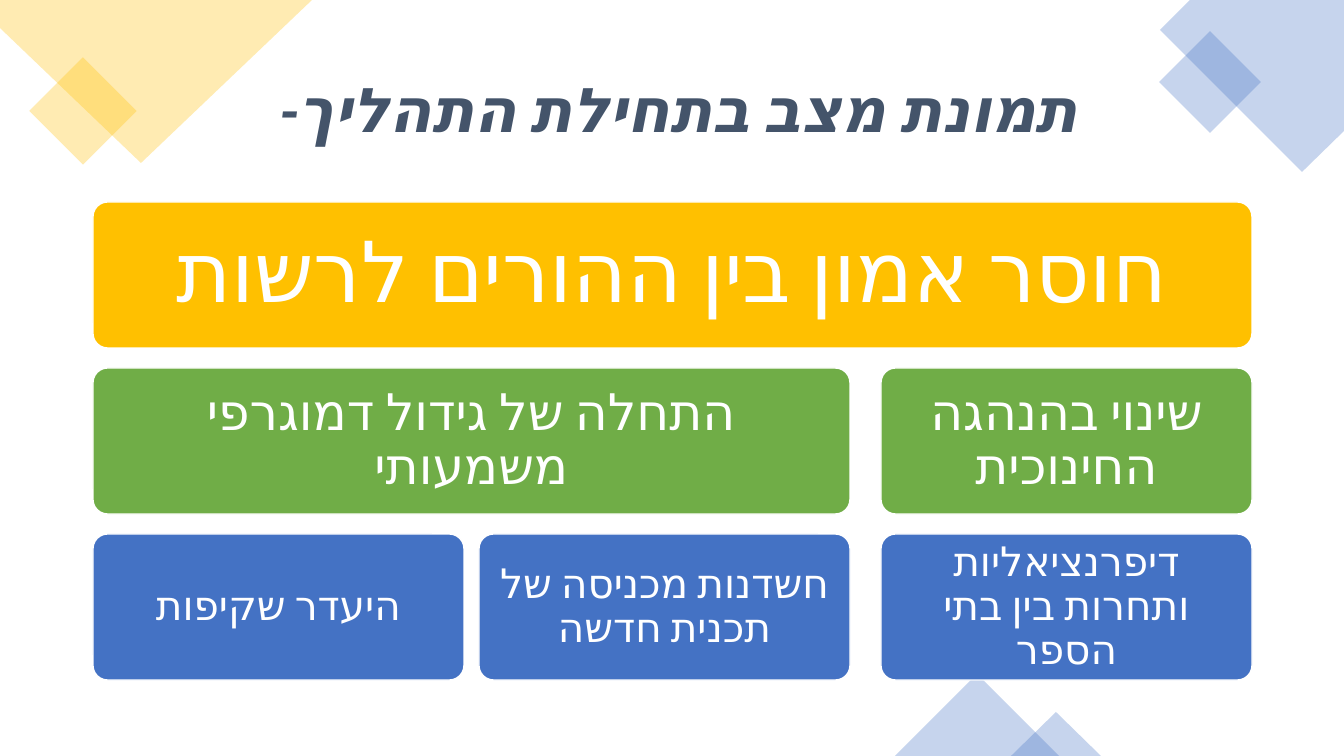
from lxml.etree import SubElement
from pptx import Presentation
from pptx.dml.color import RGBColor
from pptx.enum.shapes import MSO_SHAPE
from pptx.enum.text import MSO_ANCHOR, PP_ALIGN
from pptx.oxml.ns import qn
from pptx.util import Pt

# Content
TITLE = "תמונת מצב בתחילת התהליך- "
YELLOW, GREEN, BLUE, SLATE, WHITE = "FFC000", "70AD47", "4472C4", "44546A", "FFFFFF"

# One entry per row: fill, text size, inset px, boxes (first column, last column, text)
ROWS = [
    (YELLOW, 60, 29, [(0, 2, "חוסר אמון בין ההורים לרשות")]),
    (GREEN, 36, 19, [(0, 1, "התחלה של גידול דמוגרפי משמעותי"),
                     (2, 2, "שינוי בהנהגה החינוכית")]),
    (BLUE, 29, 16, [(0, 0, "היעדר שקיפות"),
                    (1, 1, "חשדנות מכניסה של תכנית חדשה"),
                    (2, 2, "דיפרנציאליות ותחרות בין בתי הספר")]),
]

# Corner decorations in px
CORNERS = [
    (YELLOW, [(0, 0), (312, 0), (141, 163), (0, 28)]),
    (BLUE, [(1190, 0), (1344, 0), (1344, 131), (1302, 172), (1160, 30)]),
]
ACCENTS = [
    (MSO_SHAPE.RECTANGLE, YELLOW, 45, (45, 73, 76, 76)),
    (MSO_SHAPE.RECTANGLE, BLUE, 45, (1174, 46, 72, 72)),
    (MSO_SHAPE.ISOSCELES_TRIANGLE, BLUE, 0, (895, 674, 164, 82)),
    (MSO_SHAPE.ISOSCELES_TRIANGLE, BLUE, 0, (1011, 712, 90, 44)),
]

# Geometry in px
SLIDE_W, SLIDE_H = 1344, 756
TITLE_BOX = (93, 40, 1159, 146)
COL_LEFTS, COL_W = (93, 479, 881), 371
ROW_TOP, ROW_H, ROW_PITCH = 202, 146, 166
EMU_PER_PX = 914400 / 100.8


def px(n):
    return round(n * EMU_PER_PX)


def rgb(value):
    return RGBColor.from_string(value)


def paint(sp, color, opacity=100):
    sp.shadow.inherit = False
    sp.fill.solid()
    sp.fill.fore_color.rgb = rgb(color)
    if opacity < 100:
        sp.line.fill.background()
        clr = sp.fill._xPr.find(qn("a:solidFill"))[0]
        SubElement(clr, qn("a:alpha")).set("val", str(opacity * 1000))


def write(tf, text, color, **font):
    tf.word_wrap = True
    tf.vertical_anchor = MSO_ANCHOR.MIDDLE
    p = tf.paragraphs[0]
    p.alignment = PP_ALIGN.CENTER
    p.line_spacing = 0.9
    p._p.get_or_add_pPr().set("rtl", "1")
    r = p.add_run()
    r.text = text
    for name, value in {"name": "Calibri", **font}.items():
        setattr(r.font, name, value)
    r.font.color.rgb = rgb(color)
    # Hebrew uses the complex-script font
    rPr = r._r.get_or_add_rPr()
    rPr.set("lang", "he-IL")
    SubElement(rPr, qn("a:cs")).set("typeface", "Calibri")


prs = Presentation()
prs.slide_width, prs.slide_height = px(SLIDE_W), px(SLIDE_H)
slide = prs.slides.add_slide(prs.slide_layouts[5])
shapes = slide.shapes

# Corner decorations
for color, points in CORNERS:
    builder = shapes.build_freeform(*points[0], scale=EMU_PER_PX)
    builder.add_line_segments(points[1:], close=True)
    paint(builder.convert_to_shape(), color, 30)
for kind, color, angle, box in ACCENTS:
    sp = shapes.add_shape(kind, *map(px, box))
    sp.rotation = angle
    paint(sp, color, 30)

# Title, in front of the decorations
title = shapes.title
title.left, title.top, title.width, title.height = map(px, TITLE_BOX)
write(title.text_frame, TITLE, SLATE, size=Pt(44), bold=True, italic=True)
shapes._spTree.append(title._element)

# Rows of boxes
for row, (color, size, inset, boxes) in enumerate(ROWS):
    for first, last, text in boxes:
        left = COL_LEFTS[first]
        width = COL_LEFTS[last] + COL_W - left
        top = ROW_TOP + row * ROW_PITCH
        sp = shapes.add_shape(MSO_SHAPE.ROUNDED_RECTANGLE,
                              *map(px, (left, top, width, ROW_H)))
        sp.adjustments[0] = 0.1
        paint(sp, color)
        sp.line.color.rgb = rgb(WHITE)
        sp.line.width = Pt(1)
        for side in ("left", "top", "right", "bottom"):
            setattr(sp.text_frame, f"margin_{side}", px(inset))
        write(sp.text_frame, text, WHITE, size=Pt(size))

prs.save("out.pptx")
